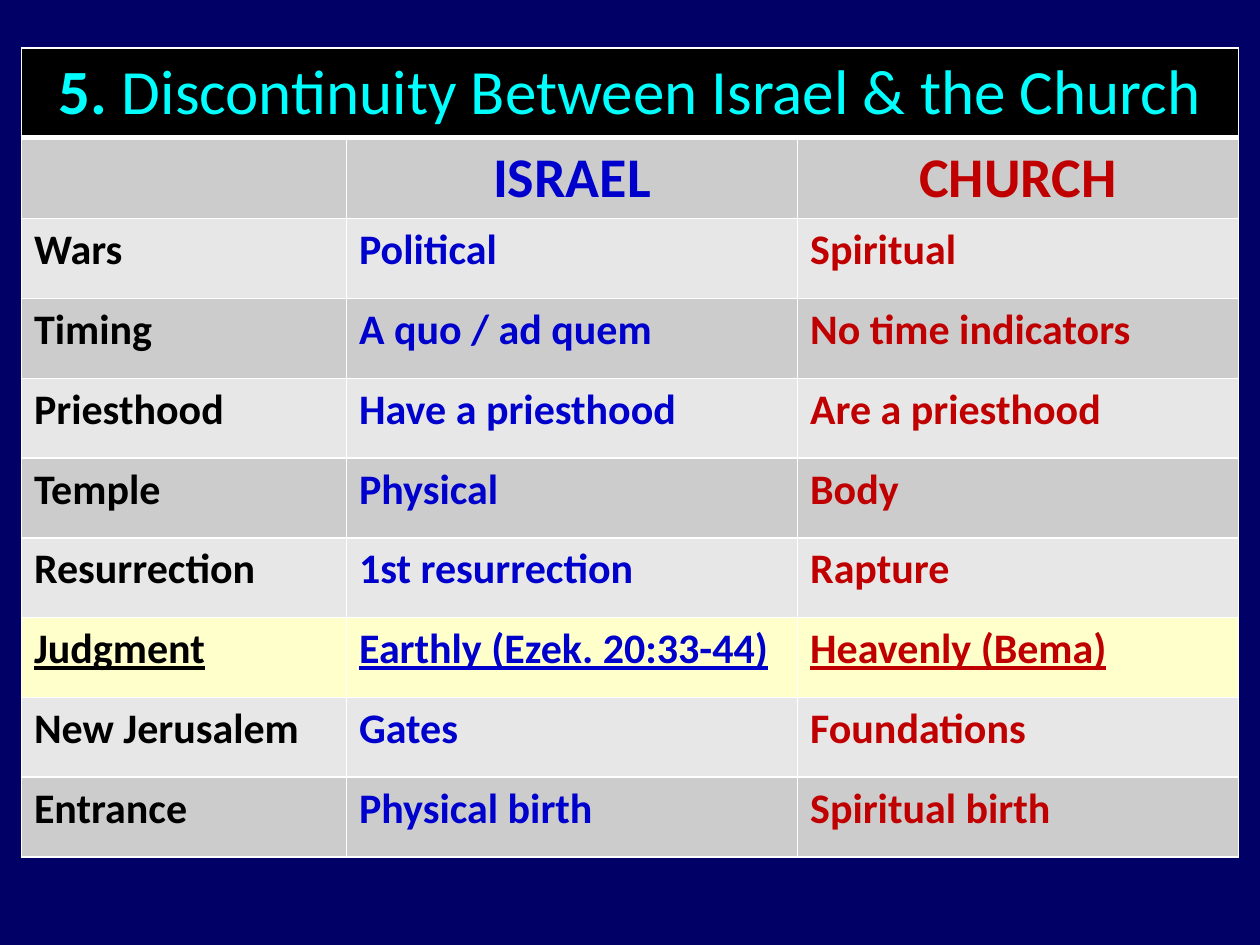
"""Build a slide with a table contrasting Israel and the Church."""
from dataclasses import dataclass

import lxml.etree
import pptx
import pptx.dml.color
import pptx.enum.text
import pptx.oxml.ns
import pptx.table
import pptx.util
from pptx.dml.color import RGBColor
from pptx.util import Inches

NAVY = RGBColor(0x00, 0x00, 0x66)
BLACK = RGBColor(0x00, 0x00, 0x00)
WHITE = RGBColor(0xFF, 0xFF, 0xFF)
CYAN = RGBColor(0x00, 0xFF, 0xFF)
BLUE = RGBColor(0x00, 0x00, 0xCC)
RED = RGBColor(0xC0, 0x00, 0x00)
GRAY = RGBColor(0xCC, 0xCC, 0xCC)
LIGHT_GRAY = RGBColor(0xE7, 0xE7, 0xE7)
YELLOW = RGBColor(0xFF, 0xFF, 0xCC)

COLUMN_WIDTHS = (2.58, 3.58, 3.5)
COLUMN_COLORS = (BLACK, BLUE, RED)
TABLE_HEIGHT = 6.4
TITLE_HEIGHT = 0.7


@dataclass(frozen=True)
class Comparison:
    topic: str
    israel: str
    church: str
    highlighted: bool = False


@dataclass(frozen=True)
class TextPart:
    text: str
    color: RGBColor
    size: float = 24
    bold: bool = True
    underline: bool = False


COMPARISONS = (
    Comparison("Wars", "Political", "Spiritual"),
    Comparison("Timing", "A quo / ad quem", "No time indicators"),
    Comparison("Priesthood", "Have a priesthood", "Are a priesthood"),
    Comparison("Temple", "Physical", "Body"),
    Comparison("Resurrection", "1st resurrection", "Rapture"),
    Comparison("Judgment", "Earthly (Ezek. 20:33-44)", "Heavenly (Bema)", True),
    Comparison("New Jerusalem", "Gates", "Foundations"),
    Comparison("Entrance", "Physical birth", "Spiritual birth"),
)


def add_element(parent, tag: str, **attributes: str):
    """Append a DrawingML element to its parent."""
    return lxml.etree.SubElement(parent, pptx.oxml.ns.qn(tag), attributes)


def style_cell(cell: pptx.table._Cell, fill: RGBColor, top: float = 1, bottom: float = 1) -> None:
    """Give a cell white borders and a solid fill."""
    properties = cell._tc.get_or_add_tcPr()
    for side, width in {"L": 1, "R": 1, "T": top, "B": bottom}.items():
        line = add_element(properties, f"a:ln{side}", w=str(pptx.util.Pt(width)))
        add_element(add_element(line, "a:solidFill"), "a:srgbClr", val=str(WHITE))
    cell.fill.solid()
    cell.fill.fore_color.rgb = fill


def write_cell(cell: pptx.table._Cell, parts: list[TextPart], centered: bool = False) -> None:
    """Write formatted text parts into a cell."""
    paragraph = cell.text_frame.paragraphs[0]
    if centered:
        paragraph.alignment = pptx.enum.text.PP_ALIGN.CENTER
        cell.vertical_anchor = pptx.enum.text.MSO_ANCHOR.MIDDLE
    spacing = add_element(paragraph._p.get_or_add_pPr(), "a:spcBef")
    add_element(spacing, "a:spcPct", val="20000")
    for part in parts:
        run = paragraph.add_run()
        run.text = part.text
        run.font.color.rgb = part.color
        formats = {
            "name": "Calibri",
            "size": pptx.util.Pt(part.size),
            "bold": part.bold,
            "underline": part.underline,
        }
        for attribute, value in formats.items():
            setattr(run.font, attribute, value)


def fill_title(table: pptx.table.Table) -> None:
    """Merge the first row and write the title in it."""
    for cell in table.rows[0].cells:
        style_cell(cell, BLACK, bottom=3)
    title = table.cell(0, 0)
    title.merge(table.cell(0, len(COLUMN_WIDTHS) - 1))
    write_cell(title, [
        TextPart("5. ", CYAN, 36),
        TextPart("Discontinuity Between Israel & the Church", CYAN, 36, bold=False),
    ], centered=True)


def fill_headings(table: pptx.table.Table) -> None:
    """Write the column headings in the second row."""
    for cell, text, color in zip(table.rows[1].cells, ("", "ISRAEL", "CHURCH"), COLUMN_COLORS):
        style_cell(cell, GRAY, top=3)
        if text:
            write_cell(cell, [TextPart(text, color, 32)], centered=True)


def fill_comparison(table: pptx.table.Table, row: int, comparison: Comparison) -> None:
    """Write one comparison in its row."""
    banding = GRAY if row % 2 else LIGHT_GRAY
    texts = (comparison.topic, comparison.israel, comparison.church)
    for cell, text, color in zip(table.rows[row].cells, texts, COLUMN_COLORS):
        style_cell(cell, YELLOW if comparison.highlighted else banding)
        write_cell(cell, [TextPart(text, color, underline=comparison.highlighted)])


def main() -> None:
    """Build and save the presentation."""
    presentation = pptx.Presentation()
    presentation.slide_width = Inches(10)
    presentation.slide_height = Inches(7.5)
    slide = presentation.slides.add_slide(presentation.slide_layouts[6])
    slide.background.fill.solid()
    slide.background.fill.fore_color.rgb = NAVY

    row_count = len(COMPARISONS) + 2
    table = slide.shapes.add_table(
        row_count, len(COLUMN_WIDTHS),
        Inches(0.17), Inches(0.38), Inches(sum(COLUMN_WIDTHS)), Inches(TABLE_HEIGHT),
    ).table
    for column, width in zip(table.columns, COLUMN_WIDTHS):
        column.width = Inches(width)
    for row in table.rows:
        row.height = Inches((TABLE_HEIGHT - TITLE_HEIGHT) / (row_count - 1))
    table.rows[0].height = Inches(TITLE_HEIGHT)

    fill_title(table)
    fill_headings(table)
    for row_index, comparison in enumerate(COMPARISONS, start=2):
        fill_comparison(table, row_index, comparison)
    presentation.save("out.pptx")


if __name__ == "__main__":
    main()
